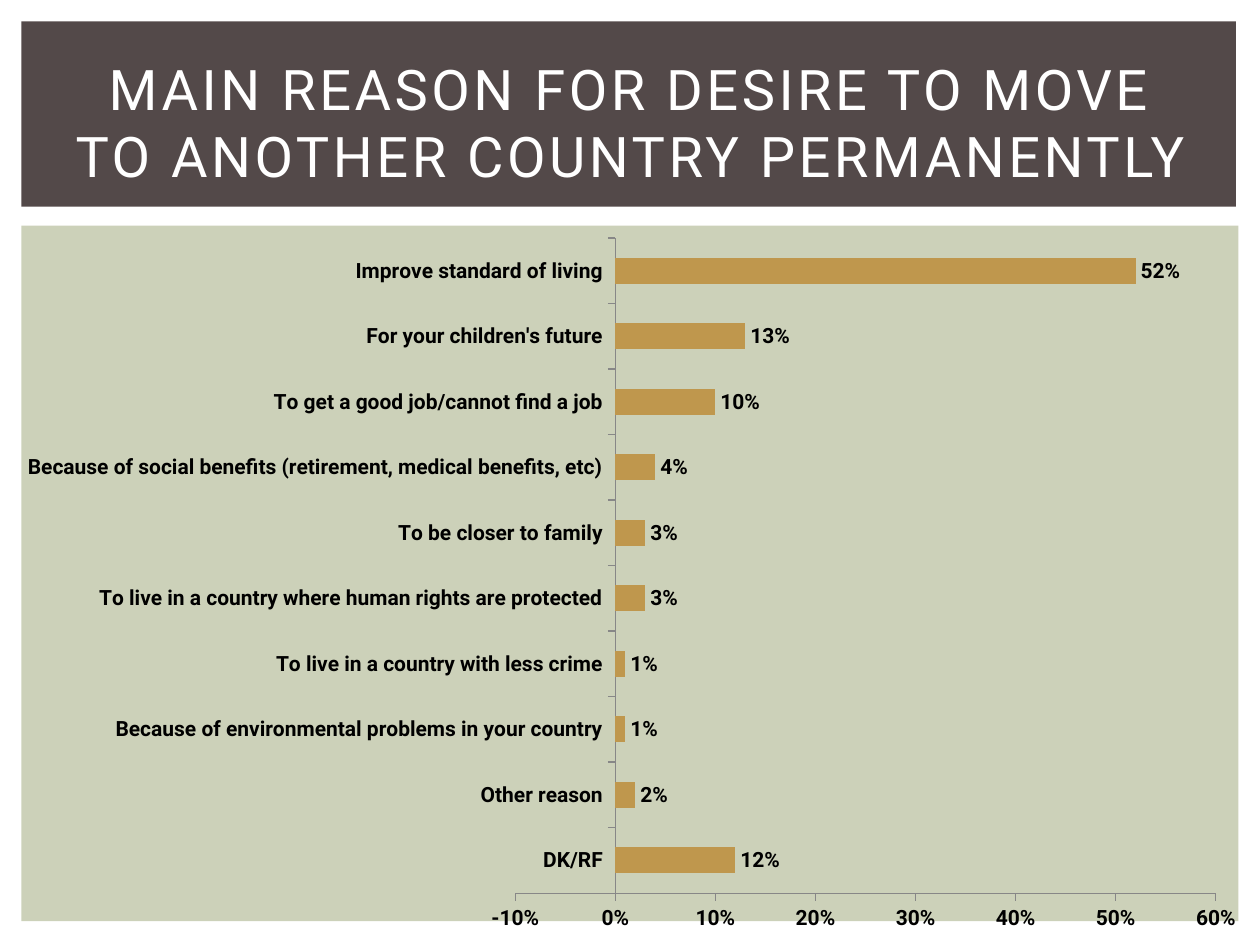
from dataclasses import dataclass
from typing import NamedTuple

from lxml.etree import SubElement
from pptx import Presentation
from pptx.chart.data import CategoryChartData
from pptx.dml.color import RGBColor
from pptx.enum.chart import XL_CHART_TYPE, XL_LABEL_POSITION, XL_TICK_MARK
from pptx.enum.shapes import MSO_SHAPE
from pptx.enum.text import MSO_ANCHOR, PP_ALIGN
from pptx.oxml.ns import qn
from pptx.util import Inches, Pt


@dataclass(frozen=True)
class Theme:
    font: str = "Roboto"
    dark: str = "534949"
    sage: str = "CCD1B9"
    gold: str = "BF974D"
    gray: str = "878787"
    white: str = "FFFFFF"
    black: str = "000000"
    title: int = 32
    label: int = 12
    track: int = 200  # letter spacing, hundredths of a point


class Box(NamedTuple):
    x: float
    y: float
    w: float
    h: float

    def emu(self) -> tuple:
        return tuple(Inches(v) for v in self)


class Panel(NamedTuple):
    box: Box
    fill: str


class Reason(NamedTuple):
    name: str
    share: float


THEME = Theme()
PANELS = [
    Panel(Box(0.17, 1.79, 9.66, 5.52), THEME.sage),
    Panel(Box(0.17, 0.17, 9.64, 1.47), THEME.dark),
]
TITLE = "MAIN REASON FOR DESIRE TO MOVE TO ANOTHER COUNTRY PERMANENTLY"
HEAD = Box(0.42, 0.39, 9.17, 1.15)
CHART = Box(0.02, 1.78, 9.98, 5.72)
PLOT = Box(4.09, 1.89, 5.56, 5.2)

# Listed from the bottom bar to the top bar
REASONS = [
    Reason("DK/RF", 0.12),
    Reason("Other reason", 0.02),
    Reason("Because of environmental problems in your country", 0.01),
    Reason("To live in a country with less crime", 0.01),
    Reason("To live in a country where human rights are protected", 0.03),
    Reason("To be closer to family", 0.03),
    Reason("Because of social benefits (retirement, medical benefits, etc)", 0.04),
    Reason("To get a good job/cannot find a job", 0.1),
    Reason("For your children's future", 0.13),
    Reason("Improve standard of living", 0.52),
]


def color(code: str) -> RGBColor:
    return RGBColor.from_string(code)


def style(font, size: int, code: str, bold: bool) -> None:
    font.name = THEME.font
    font.size = Pt(size)
    font.bold = bold
    font.color.rgb = color(code)


def add_panel(slide, panel: Panel) -> None:
    shape = slide.shapes.add_shape(MSO_SHAPE.RECTANGLE, *panel.box.emu())
    shape.shadow.inherit = False
    shape.fill.solid()
    shape.fill.fore_color.rgb = color(panel.fill)
    shape.line.fill.background()


def add_title(slide) -> None:
    frame = slide.shapes.add_textbox(*HEAD.emu()).text_frame
    frame.word_wrap = True
    frame.vertical_anchor = MSO_ANCHOR.MIDDLE
    para = frame.paragraphs[0]
    para.alignment = PP_ALIGN.CENTER
    run = para.add_run()
    run.text = TITLE
    style(run.font, THEME.title, THEME.white, False)
    run._r.get_or_add_rPr().set("spc", str(THEME.track))


def place_plot(chart) -> None:
    """Fix the inner plot area as fractions of the chart frame."""
    area = chart._chartSpace.find(".//" + qn("c:plotArea"))
    for old in area.findall(qn("c:layout")):
        area.remove(old)
    outer = SubElement(area, qn("c:layout"))
    area.insert(0, outer)
    inner = SubElement(outer, qn("c:manualLayout"))
    parts = {
        "layoutTarget": "inner", "xMode": "edge", "yMode": "edge",
        "x": (PLOT.x - CHART.x) / CHART.w,
        "y": (PLOT.y - CHART.y) / CHART.h,
        "w": PLOT.w / CHART.w,
        "h": PLOT.h / CHART.h,
    }
    for tag, val in parts.items():
        SubElement(inner, qn(f"c:{tag}")).set("val", str(val))


def add_bars(slide) -> None:
    data = CategoryChartData(number_format="0%")
    data.categories = [item.name for item in REASONS]
    data.add_series("Series 1", [item.share for item in REASONS])
    chart = slide.shapes.add_chart(
        XL_CHART_TYPE.BAR_CLUSTERED, *CHART.emu(), data
    ).chart
    chart.has_title = False
    chart.has_legend = False
    style(chart.font, THEME.label, THEME.black, True)

    # Axes
    for axis in (chart.category_axis, chart.value_axis):
        axis.has_major_gridlines = False
        axis.major_tick_mark = XL_TICK_MARK.OUTSIDE
        axis.minor_tick_mark = XL_TICK_MARK.NONE
        axis.format.line.color.rgb = color(THEME.gray)
        axis.format.line.width = Pt(0.75)
    scale = chart.value_axis
    scale.minimum_scale = -0.1
    scale.maximum_scale = 0.6
    scale.major_unit = 0.1
    scale.tick_labels.number_format = "0%"
    scale.tick_labels.number_format_is_linked = False

    # Bars and their labels
    plot = chart.plots[0]
    plot.gap_width = 150
    plot.vary_by_categories = False
    fill = plot.series[0].format.fill
    fill.solid()
    fill.fore_color.rgb = color(THEME.gold)
    plot.has_data_labels = True
    labels = plot.data_labels
    labels.show_value = True
    labels.number_format = "0%"
    labels.number_format_is_linked = False
    labels.position = XL_LABEL_POSITION.OUTSIDE_END
    style(labels.font, THEME.label, THEME.black, True)
    place_plot(chart)


def main() -> None:
    deck = Presentation()
    deck.slide_width, deck.slide_height = Inches(10), Inches(7.5)
    slide = deck.slides.add_slide(deck.slide_layouts[6])
    for panel in PANELS:
        add_panel(slide, panel)
    add_title(slide)
    add_bars(slide)
    deck.save("out.pptx")


if __name__ == "__main__":
    main()
